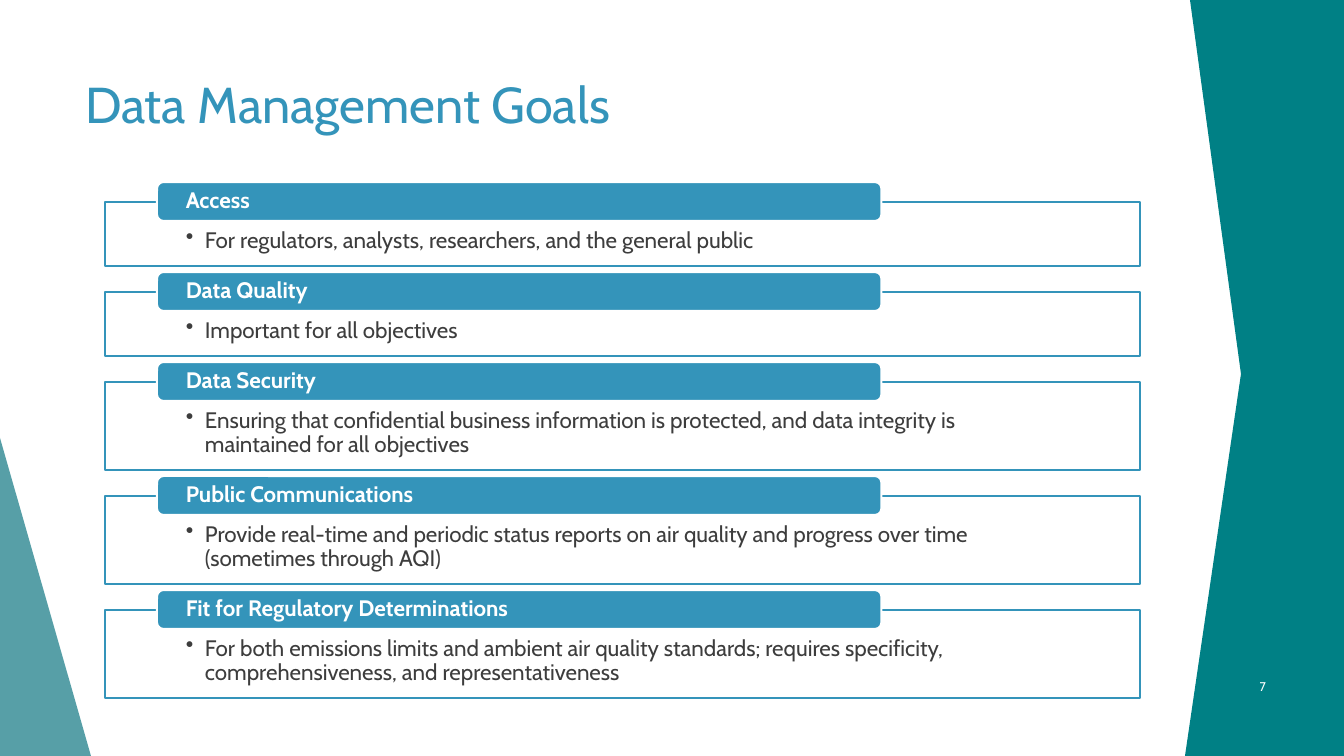
import pptx
import pptx.util
import pptx.dml.color
import pptx.enum.shapes
import pptx.enum.text
import pptx.oxml.ns
from lxml import etree

WIDTH, HEIGHT = 1344, 756
SCALE = 12192000 / WIDTH
FONT = "Cabin"
COLORS = {
    "blue": "3494BA",
    "teal": "008085",
    "pale_teal": "3A8F98",
    "white": "FFFFFF",
    "text": "3D3D3D",
}
SHAPES = pptx.enum.shapes.MSO_SHAPE
ANCHOR = pptx.enum.text.MSO_ANCHOR
ALIGN = pptx.enum.text.PP_ALIGN

LINE_HEIGHT = 24
GOAL_GAP = 26
# Heading, description, number of lines the description takes
GOALS = [
    ("Access", "For regulators, analysts, researchers, and the general public", 1),
    ("Data Quality", "Important for all objectives", 1),
    ("Data Security",
     "Ensuring that confidential business information is protected, "
     "and data integrity is maintained for all objectives", 2),
    ("Public Communications",
     "Provide real-time and periodic status reports on air quality "
     "and progress over time (sometimes through AQI)", 2),
    ("Fit for Regulatory Determinations",
     "For both emissions limits and ambient air quality standards; "
     "requires specificity, comprehensiveness, and representativeness", 2),
]


def px(length):
    return pptx.util.Emu(round(length * SCALE))


def rgb(name):
    return pptx.dml.color.RGBColor.from_string(COLORS[name])


def paint(shape, fill, line=None, opacity=100):
    """Set fill, outline and opacity, and remove the shadow."""
    shape.shadow.inherit = False
    shape.fill.solid()
    shape.fill.fore_color.rgb = rgb(fill)
    if opacity < 100:
        color = shape.fill._xPr.find(".//" + pptx.oxml.ns.qn("a:srgbClr"))
        alpha = etree.SubElement(color, pptx.oxml.ns.qn("a:alpha"))
        alpha.set("val", str(opacity * 1000))
    if line:
        shape.line.color.rgb = rgb(line)
        shape.line.width = pptx.util.Pt(1.5)
    else:
        shape.line.fill.background()


def add_shape(page, kind, box):
    return page.shapes.add_shape(kind, *map(px, box))


def write(shape, text, size, color, insets, anchor=ANCHOR.TOP,
          align=ALIGN.LEFT, bold=False, spacing=1.0, bullet_indent=0):
    frame = shape.text_frame
    frame.word_wrap = True
    frame.vertical_anchor = anchor
    (frame.margin_left, frame.margin_top,
     frame.margin_right, frame.margin_bottom) = map(px, insets)
    para = frame.paragraphs[0]
    para.alignment = align
    para.line_spacing = spacing
    if bullet_indent:
        properties = para._p.get_or_add_pPr()
        properties.set("marL", str(px(bullet_indent)))
        properties.set("indent", str(-px(bullet_indent)))
        bullet = etree.SubElement(properties, pptx.oxml.ns.qn("a:buChar"))
        bullet.set("char", "•")
    span = para.add_run()
    span.text = text
    span.font.name = FONT
    span.font.size = pptx.util.Pt(size)
    span.font.bold = bold
    span.font.color.rgb = rgb(color)


def add_side_panels(page):
    wedge = add_shape(page, SHAPES.RIGHT_TRIANGLE, (-2, 431, 93, 325))
    paint(wedge, "pale_teal", opacity=85)
    outline = [(WIDTH, 0), (WIDTH, HEIGHT), (1185, HEIGHT), (1241, 374), (1190, 0)]
    builder = page.shapes.build_freeform(*outline[0], scale=SCALE)
    builder.add_line_segments(outline[1:], close=True)
    paint(builder.convert_to_shape(), "teal")


def add_title(page, box, text):
    title = page.shapes.add_textbox(*map(px, box))
    write(title, text, 36, "blue", (10, 5, 10, 5))


def add_page_number(page, box, number):
    label = page.shapes.add_textbox(*map(px, box))
    write(label, str(number), 9, "white", (10, 5, 10, 5),
          anchor=ANCHOR.MIDDLE, align=ALIGN.RIGHT)


def add_goal(page, box, heading, description):
    """Outlined description with a heading tab across its top edge."""
    left, top, width, height = box
    body = add_shape(page, SHAPES.RECTANGLE, box)
    paint(body, "white", "blue", opacity=90)
    write(body, description, 16, "text", (81, 27, 81, 12),
          spacing=0.9, bullet_indent=19)
    tab = add_shape(page, SHAPES.ROUNDED_RECTANGLE,
                    (left + 52, top - 20, width * 0.7, 39))
    paint(tab, "blue", "white")
    write(tab, heading, 16, "white", (27, 0, 27, 0),
          anchor=ANCHOR.MIDDLE, bold=True, spacing=0.9)


def add_goal_list(page, left, top, width):
    for heading, description, lines in GOALS:
        height = 40 + lines * LINE_HEIGHT
        add_goal(page, (left, top, width, height), heading, description)
        top += height + GOAL_GAP


def main():
    deck = pptx.Presentation()
    deck.slide_width, deck.slide_height = px(WIDTH), px(HEIGHT)
    page = deck.slides.add_slide(deck.slide_layouts[6])
    add_side_panels(page)
    add_title(page, (75, 68, 1201, 145), "Data Management Goals")
    add_page_number(page, (1201, 667, 75, 40), 7)
    add_goal_list(page, left=105, top=202, width=1035)
    deck.save("out.pptx")


if __name__ == "__main__":
    main()
